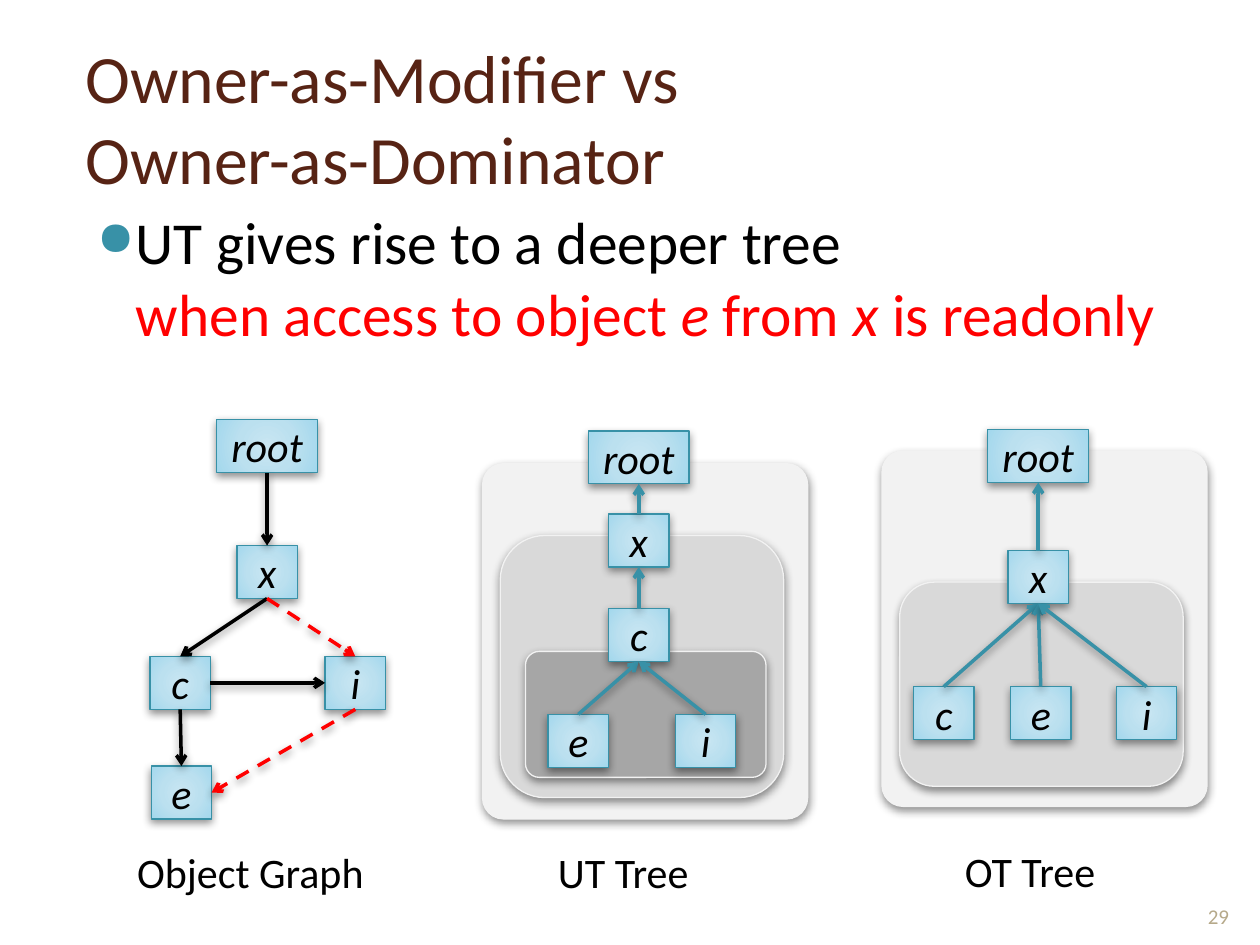
from typing import NamedTuple

from pptx import Presentation
from pptx.dml.color import RGBColor
from pptx.enum.dml import MSO_LINE as Dash
from pptx.enum.shapes import MSO_CONNECTOR as Link, MSO_SHAPE as Kind
from pptx.enum.text import MSO_ANCHOR as Anchor, PP_ALIGN as Align
from pptx.oxml import parse_xml
from pptx.oxml.ns import nsdecls, qn
from pptx.util import Inches, Pt

HUES = {
    "title": "572314", "text": "000000", "alert": "FF0000", "teal": "3891A7",
    "pale": "F2F2F2", "mid": "D9D9D9", "dark": "A6A6A6", "page": "B6A98A",
}
STOPS = [(0, "C9E6F2"), (50, "BBE0EF"), (97, "A4D8ED"), (100, "9BD7EE")]
TOP, LEFT, BASE, RIGHT = range(4)
TALL = 0.42


class Run(NamedTuple):
    text: str
    hue: str = "text"
    slant: bool = False


class Panel(NamedTuple):
    x: float
    y: float
    w: float
    h: float
    hue: str
    bend: float


class Node(NamedTuple):
    name: str
    x: float
    y: float


class Edge(NamedTuple):
    start: str
    end: str
    out: int = BASE
    into: int = TOP
    hue: str = "text"


class Graph(NamedTuple):
    label: Run
    x: float
    y: float
    w: float
    panels: list[Panel]
    nodes: list[Node]
    edges: list[Edge]
    arrow: str


def tree(*pairs: str) -> list[Edge]:
    return [Edge(*pair.split(), hue="teal") for pair in pairs]


GRAPHS = [
    Graph(
        Run("OT Tree"), 7.56, 6.66, 1.44,
        [Panel(7, 3.58, 2.58, 2.82, "pale", 0.065),
         Panel(7.14, 4.62, 2.25, 1.62, "mid", 0.17)],
        [Node("root", 7.84, 3.41), Node("x", 8, 4.37), Node("c", 7.25, 5.45),
         Node("e", 8.02, 5.45), Node("i", 8.86, 5.45)],
        tree("root x", "x c", "x e", "x i"), "headEnd",
    ),
    Graph(
        Run("UT Tree"), 4.33, 6.67, 1.5,
        [Panel(3.83, 3.68, 2.58, 2.82, "pale", 0.065),
         Panel(3.97, 4.25, 2.25, 2.08, "mid", 0.17),
         Panel(4.17, 5.17, 1.91, 1, "dark", 0.11)],
        [Node("root", 4.67, 3.42), Node("x", 4.83, 4.08), Node("c", 4.83, 4.83),
         Node("e", 4.35, 5.67), Node("i", 5.36, 5.67)],
        tree("root x", "x c", "c e", "c i"), "headEnd",
    ),
    Graph(
        Run("Object Graph"), 0.99, 6.67, 2.1, [],
        [Node("root", 1.72, 3.33), Node("x", 1.88, 4.33), Node("c", 1.19, 5.21),
         Node("i", 2.58, 5.21), Node("e", 1.2, 6.08)],
        [Edge("root", "x"), Edge("x", "c"), Edge("x", "i", hue="alert"),
         Edge("c", "e"), Edge("i", "e", into=RIGHT, hue="alert"),
         Edge("c", "i", RIGHT, LEFT)],
        "tailEnd",
    ),
]


def tint(hue: str) -> RGBColor:
    return RGBColor.from_string(HUES[hue])


def shade(shape) -> None:
    props = shape._element.spPr
    for old in props.findall(qn("a:effectLst")):
        props.remove(old)
    props.append(parse_xml(
        f'<a:effectLst {nsdecls("a")}><a:outerShdw blurRad="{Pt(5)}" dist="{Pt(2)}" '
        'dir="5400000" algn="ctr" rotWithShape="0"><a:srgbClr val="000000">'
        '<a:alpha val="43000"/></a:srgbClr></a:outerShdw></a:effectLst>'))


def blend(shape) -> None:
    stops = "".join(
        f'<a:gs pos="{at * 1000}"><a:srgbClr val="{hue}"/></a:gs>' for at, hue in STOPS)
    grad = parse_xml(
        f'<a:gradFill {nsdecls("a")} rotWithShape="1"><a:gsLst>{stops}</a:gsLst>'
        '<a:path path="circle"><a:fillToRect l="50000" t="50000" r="50000" b="50000"/>'
        '</a:path></a:gradFill>')
    props = shape._element.spPr
    props.replace(props.find(qn("a:solidFill")), grad)


def write(para, runs: list[Run], size: float) -> None:
    for item in runs:
        if item.text == "\n":
            para.add_line_break()
            continue
        run = para.add_run()
        run.text = item.text
        font = run.font
        font.name, font.size, font.italic = "Calibri", Pt(size), item.slant
        font.color.rgb = tint(item.hue)


def add_text(slide, x: float, y: float, w: float, h: float, runs: list[Run],
             size: float, anchor=Anchor.TOP, wrap: bool = True):
    box = slide.shapes.add_textbox(Inches(x), Inches(y), Inches(w), Inches(h))
    frame = box.text_frame
    frame.word_wrap = wrap
    frame.vertical_anchor = anchor
    para = frame.paragraphs[0]
    write(para, runs, size)
    return para


def add_box(slide, kind, x: float, y: float, w: float, h: float, hue: str, rim: str):
    shape = slide.shapes.add_shape(kind, Inches(x), Inches(y), Inches(w), Inches(h))
    shape.fill.solid()
    shape.fill.fore_color.rgb = tint(hue)
    shape.line.color.rgb = tint(rim)
    shape.line.width = Pt(0.75)
    shade(shape)
    return shape


def add_node(slide, node: Node):
    wide = 0.8 if node.name == "root" else 0.48
    shape = add_box(slide, Kind.RECTANGLE, node.x, node.y, wide, TALL, "pale", "teal")
    blend(shape)
    frame = shape.text_frame
    frame.word_wrap = False
    frame.vertical_anchor = Anchor.MIDDLE
    para = frame.paragraphs[0]
    para.alignment = Align.CENTER
    write(para, [Run(node.name, slant=True)], 24)
    return shape


def add_edge(slide, edge: Edge, boxes: dict, arrow: str) -> None:
    link = slide.shapes.add_connector(Link.STRAIGHT, 0, 0, 0, 0)
    link.begin_connect(boxes[edge.start], edge.out)
    link.end_connect(boxes[edge.end], edge.into)
    link.line.color.rgb = tint(edge.hue)
    link.line.width = Pt(2)
    if edge.hue == "alert":
        link.line.dash_style = Dash.DASH
    link.line._get_or_add_ln().append(
        parse_xml(f'<a:{arrow} {nsdecls("a")} type="arrow"/>'))
    shade(link)


def add_graph(slide, graph: Graph) -> None:
    add_text(slide, graph.x, graph.y, graph.w, 0.5, [graph.label], 24, wrap=False)
    for panel in graph.panels:
        shape = add_box(slide, Kind.ROUNDED_RECTANGLE, *panel[:5], "pale")
        shape.adjustments[0] = panel.bend
    boxes = {node.name: add_node(slide, node) for node in graph.nodes}
    for edge in graph.edges:
        add_edge(slide, edge, boxes, graph.arrow)


def add_bullet(para) -> None:
    para.space_before = Pt(6)
    props = para._p.get_or_add_pPr()
    props.set("marL", str(Inches(0.4)))
    props.set("indent", str(Inches(-0.31)))
    for part in (f'buClr {nsdecls("a")}><a:srgbClr val="{HUES["teal"]}"/></a:buClr>',
                 f'buSzPct {nsdecls("a")} val="80000"/>',
                 f'buChar {nsdecls("a")} char="●"/>'):
        props.append(parse_xml("<a:" + part))


def main() -> None:
    deck = Presentation()
    deck.slide_width, deck.slide_height = Inches(10), Inches(7.5)
    slide = deck.slides.add_slide(deck.slide_layouts[6])
    add_text(slide, 0.58, 0.3, 8.87, 1.25,
             [Run("Owner-as-Modifier vs ", "title"), Run("\n"),
              Run("Owner-as-Dominator", "title")], 38.7, Anchor.MIDDLE)
    add_bullet(add_text(
        slide, 0.58, 1.58, 8.87, 5.25,
        [Run("UT gives rise to a deeper tree"), Run("\n"),
         Run("when access to object ", "alert"), Run("e", "alert", True),
         Run(" from ", "alert"), Run("x ", "alert", True),
         Run("is readonly", "alert")], 34))
    for graph in GRAPHS:
        add_graph(slide, graph)
    page = add_text(slide, 9.42, 6.9, 0.5, 0.52, [Run("29", "page")], 12, Anchor.BOTTOM)
    page.alignment = Align.CENTER
    deck.save("out.pptx")


if __name__ == "__main__":
    main()
